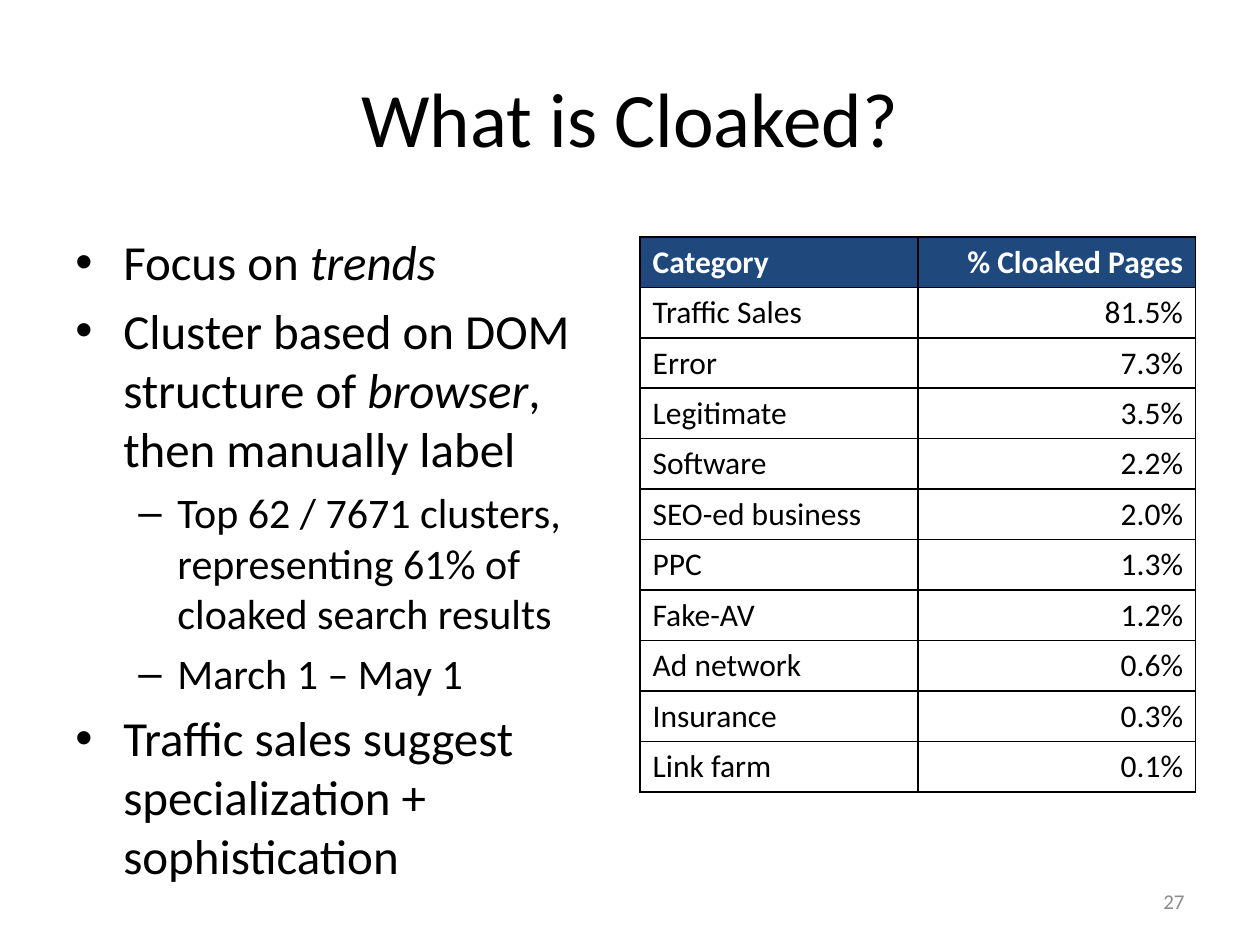
from dataclasses import dataclass

from lxml.etree import SubElement
from pptx import Presentation
from pptx.dml.color import RGBColor
from pptx.enum.text import MSO_ANCHOR, PP_ALIGN
from pptx.oxml.ns import qn
from pptx.util import Inches, Pt


@dataclass(frozen=True)
class Theme:
    font: str = "Calibri"
    text: str = "000000"
    header_text: str = "FFFFFF"
    header_fill: str = "1F497D"
    border: str = "000000"
    muted: str = "8C8C8C"
    title_size: int = 44
    body_sizes: tuple = (28, 24)
    table_size: int = 18
    number_size: int = 12


THEME = Theme()

LEVELS = [("•", 0.38, 0.38), ("–", 0.81, 0.31)]

BULLETS = [
    (0, [("Focus on ", False), ("trends", True)]),
    (0, [("Cluster based on DOM structure of ", False), ("browser", True),
         (", then manually label", False)]),
    (1, [("Top 62 / 7671 clusters, representing 61% of cloaked search results", False)]),
    (1, [("March 1 – May 1", False)]),
    (0, [("Traffic sales suggest specialization + sophistication", False)]),
]

CATEGORIES = [
    ("Category", "% Cloaked Pages"),
    ("Traffic Sales", "81.5%"),
    ("Error", "7.3%"),
    ("Legitimate", "3.5%"),
    ("Software", "2.2%"),
    ("SEO-ed business", "2.0%"),
    ("PPC", "1.3%"),
    ("Fake-AV", "1.2%"),
    ("Ad network", "0.6%"),
    ("Insurance", "0.3%"),
    ("Link farm", "0.1%"),
]


def add_run(p, text, size, color=THEME.text, bold=False, italic=False):
    r = p.add_run()
    r.text = text
    r.font.name = THEME.font
    r.font.size = Pt(size)
    r.font.bold = bold
    r.font.italic = italic
    r.font.color.rgb = RGBColor.from_string(color)


def set_bullet(p, level):
    char, margin, hanging = LEVELS[level]
    p.level = level
    pPr = p._p.get_or_add_pPr()
    pPr.set("marL", str(Inches(margin)))
    pPr.set("indent", str(-Inches(hanging)))
    SubElement(pPr, qn("a:buFont"), typeface="Arial")
    SubElement(pPr, qn("a:buChar"), char=char)


def set_borders(cell):
    tcPr = cell._tc.get_or_add_tcPr()
    for i, side in enumerate(("lnL", "lnR", "lnT", "lnB")):
        ln = SubElement(tcPr, qn(f"a:{side}"), w=str(Pt(1)))
        fill = SubElement(ln, qn("a:solidFill"))
        SubElement(fill, qn("a:srgbClr"), val=THEME.border)
        tcPr.insert(i, ln)


def add_title(s, left, top, width, height, text):
    sp = s.shapes.title
    sp.left, sp.top, sp.width, sp.height = map(Inches, (left, top, width, height))
    tf = sp.text_frame
    tf.vertical_anchor = MSO_ANCHOR.MIDDLE
    p = tf.paragraphs[0]
    p.alignment = PP_ALIGN.CENTER
    add_run(p, text, THEME.title_size)


def add_text_box(s, left, top, width, height):
    tf = s.shapes.add_textbox(*map(Inches, (left, top, width, height))).text_frame
    tf.word_wrap = True
    return tf


def add_bullets(s, left, top, width, height, bullets):
    tf = add_text_box(s, left, top, width, height)
    for i, (level, runs) in enumerate(bullets):
        p = tf.add_paragraph() if i else tf.paragraphs[0]
        p.space_before = Pt(5.6)
        set_bullet(p, level)
        for text, italic in runs:
            add_run(p, text, THEME.body_sizes[level], italic=italic)


def add_category_table(s, left, top, width, height, rows):
    columns = len(rows[0])
    frame = s.shapes.add_table(len(rows), columns,
                               *map(Inches, (left, top, width, height)))
    table = frame.table
    table.horz_banding = False
    for i, row in enumerate(rows):
        header = i == 0
        for j, text in enumerate(row):
            cell = table.cell(i, j)
            if header:
                cell.fill.solid()
                cell.fill.fore_color.rgb = RGBColor.from_string(THEME.header_fill)
            else:
                cell.fill.background()
            set_borders(cell)
            p = cell.text_frame.paragraphs[0]
            p.alignment = PP_ALIGN.RIGHT if j else PP_ALIGN.LEFT
            add_run(p, text, THEME.table_size,
                    THEME.header_text if header else THEME.text, bold=header)


def add_slide_number(s, left, top, width, height, number):
    tf = add_text_box(s, left, top, width, height)
    tf.vertical_anchor = MSO_ANCHOR.MIDDLE
    p = tf.paragraphs[0]
    p.alignment = PP_ALIGN.RIGHT
    add_run(p, number, THEME.number_size, THEME.muted)


def main():
    prs = Presentation()
    prs.slide_width, prs.slide_height = Inches(10), Inches(7.5)
    s = prs.slides.add_slide(prs.slide_layouts[5])
    add_title(s, 0.5, 0.3, 9, 1.25, "What is Cloaked?")
    add_bullets(s, 0.5, 1.79, 4.42, 4.95, BULLETS)
    add_category_table(s, 5.08, 1.88, 4.41, 4.4, CATEGORIES)
    add_slide_number(s, 7.17, 6.95, 2.33, 0.4, "27")
    prs.save("out.pptx")


if __name__ == "__main__":
    main()
